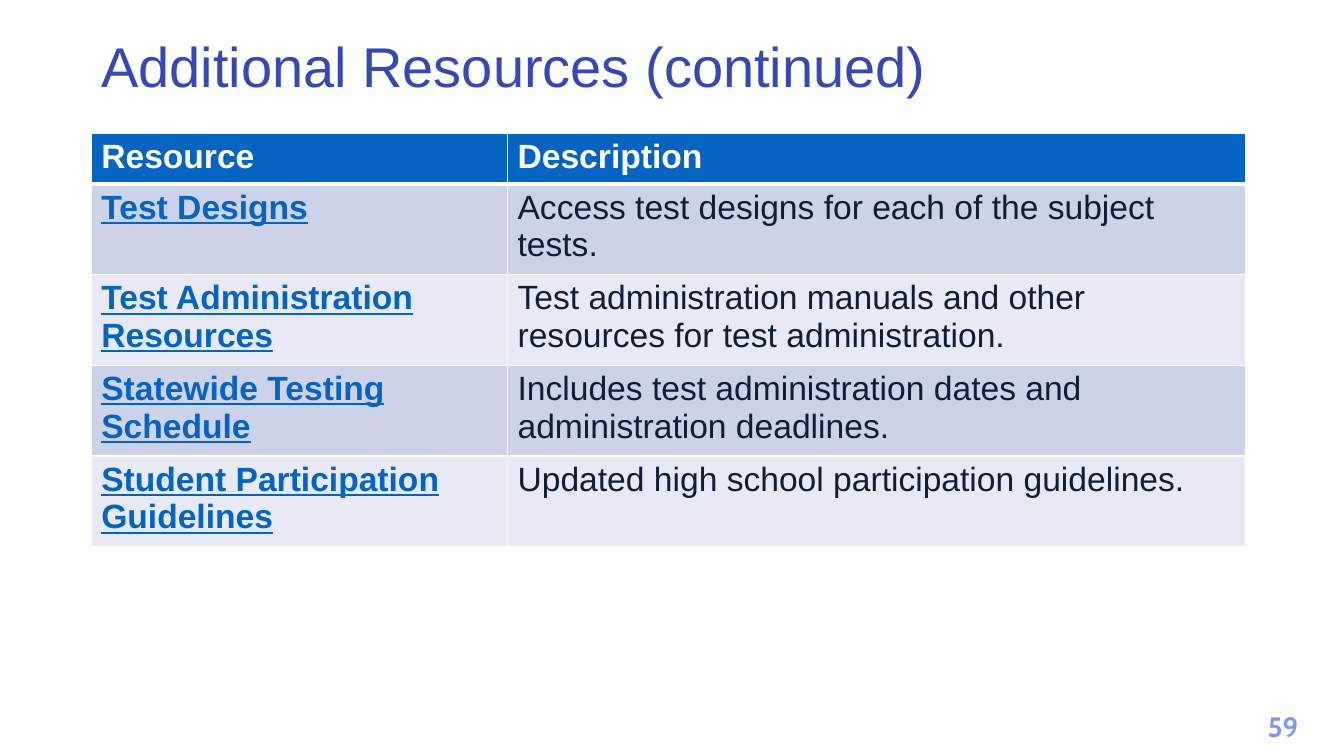
from lxml.etree import SubElement
from pptx import Presentation
from pptx.dml.color import RGBColor
from pptx.enum.text import MSO_ANCHOR, PP_ALIGN
from pptx.oxml.ns import qn
from pptx.util import Cm, Pt

COLORS = {
    "title": "3647B6",
    "page": "8397E7",
    "accent": "0563C1",
    "body": "101D35",
    "white": "FFFFFF",
    "dark_band": "CCD3E9",
    "light_band": "E7EAF4",
}
HEADINGS = ("Resource", "Description")
RESOURCES = [
    ("Test Designs", "Access test designs for each of the subject tests."),
    ("Test Administration Resources",
     "Test administration manuals and other resources for test administration."),
    ("Statewide Testing Schedule",
     "Includes test administration dates and administration deadlines."),
    ("Student Participation Guidelines",
     "Updated high school participation guidelines."),
]
COLUMN_WIDTHS = (Cm(10.49), Cm(18.59))
HEADER_HEIGHT, RESOURCE_HEIGHT = Cm(1.18), Cm(2.14)


def write(frame, text, size=24, color="body", font="Arial", bold=False,
          underline=False, align=PP_ALIGN.LEFT, line_spacing=None):
    paragraph = frame.paragraphs[0]
    paragraph.alignment = align
    paragraph.line_spacing = line_spacing
    run = paragraph.add_run()
    run.text = text
    run.font.name = font
    run.font.size = Pt(size)
    run.font.bold = bold
    run.font.underline = underline
    run.font.color.rgb = RGBColor.from_string(COLORS[color])


def add_label(slide, text, left, top, width, height, **text_format):
    frame = slide.shapes.add_textbox(left, top, width, height).text_frame
    frame.word_wrap = True
    frame.vertical_anchor = MSO_ANCHOR.MIDDLE
    write(frame, text, **text_format)


def set_borders(cell, top=1, bottom=1):
    """Draw white cell borders; top and bottom are widths in points."""
    properties = cell._tc.get_or_add_tcPr()
    widths = {"lnL": 1, "lnR": 1, "lnT": top, "lnB": bottom}
    for position, (side, width) in enumerate(widths.items()):
        line = SubElement(properties, qn(f"a:{side}"), w=str(Pt(width)))
        properties.insert(position, line)
        fill = SubElement(line, qn("a:solidFill"))
        SubElement(fill, qn("a:srgbClr"), val=COLORS["white"])


def fill_cell(cell, text, background, top=1, bottom=1, **text_format):
    cell.fill.solid()
    cell.fill.fore_color.rgb = RGBColor.from_string(COLORS[background])
    set_borders(cell, top, bottom)
    write(cell.text_frame, text, **text_format)


def add_resource_table(slide):
    height = HEADER_HEIGHT + RESOURCE_HEIGHT * len(RESOURCES)
    table = slide.shapes.add_table(
        len(RESOURCES) + 1, len(HEADINGS), Cm(2.3), Cm(3.36),
        sum(COLUMN_WIDTHS), height).table
    for column, width in zip(table.columns, COLUMN_WIDTHS):
        column.width = width
    for row in table.rows:
        row.height = RESOURCE_HEIGHT
    table.rows[0].height = HEADER_HEIGHT

    for column, heading in enumerate(HEADINGS):
        fill_cell(table.cell(0, column), heading, "accent", bottom=3,
                  color="white", bold=True)
    for row, (resource, description) in enumerate(RESOURCES, start=1):
        band = "dark_band" if row % 2 else "light_band"
        top = 3 if row == 1 else 1
        fill_cell(table.cell(row, 0), resource, band, top=top,
                  color="accent", bold=True, underline=True)
        fill_cell(table.cell(row, 1), description, band, top=top)


def main():
    presentation = Presentation()
    presentation.slide_width, presentation.slide_height = Cm(33.87), Cm(19.05)
    slide = presentation.slides.add_slide(presentation.slide_layouts[6])
    add_label(slide, "59", Cm(31.55), Cm(17.73), Cm(1.57), Cm(1.12), size=20,
              color="page", font="Cabin", bold=True, align=PP_ALIGN.CENTER)
    add_label(slide, "Additional Resources (continued)", Cm(2.3), Cm(0.81),
              Cm(31.57), Cm(1.88), size=40, color="title", line_spacing=0.9)
    add_resource_table(slide)
    presentation.save("out.pptx")


if __name__ == "__main__":
    main()
